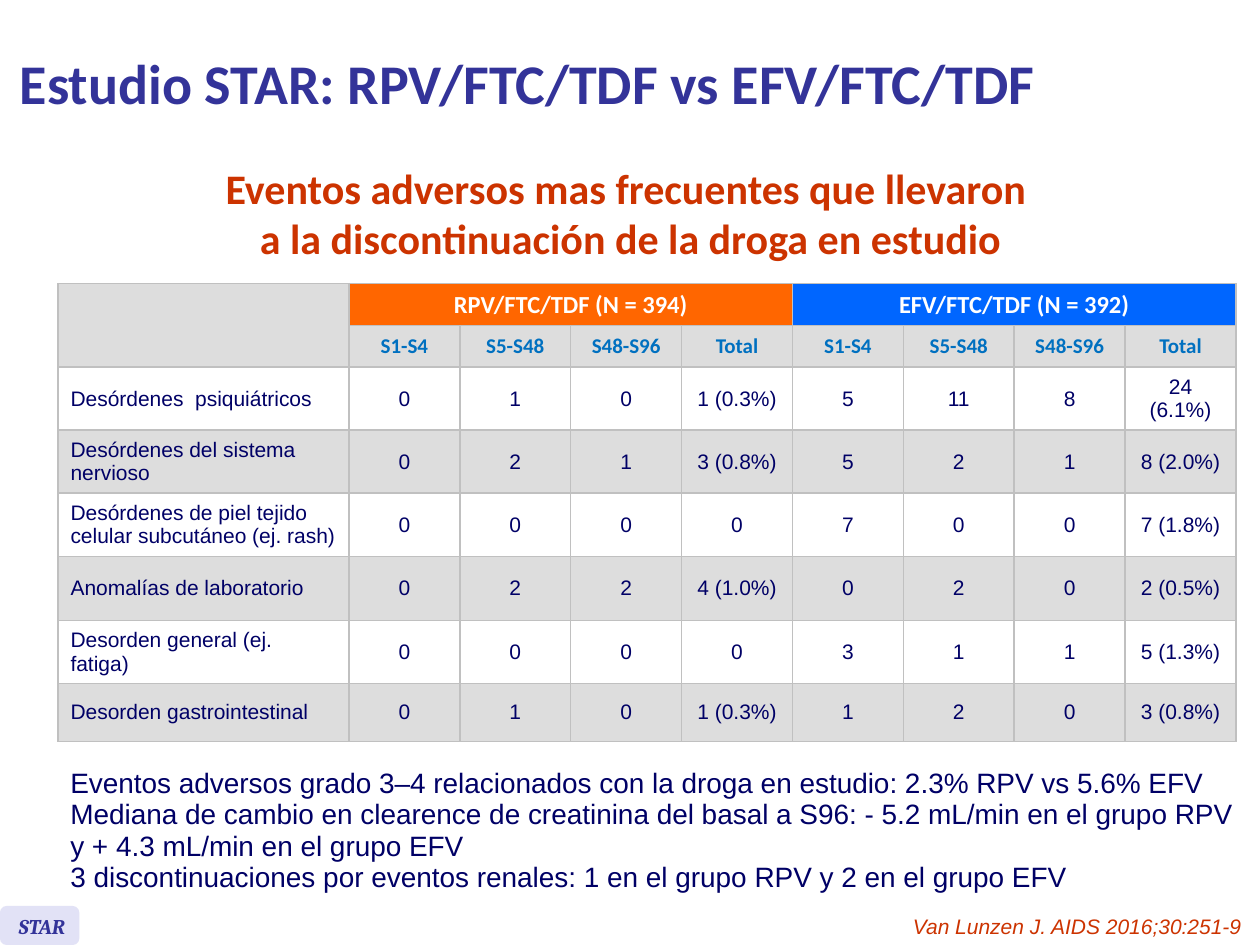
"""Build the STAR study slide on adverse events that led to discontinuation."""
import pptx
import pptx.dml.color
import pptx.enum.shapes
import pptx.enum.text
import pptx.oxml
import pptx.oxml.ns
import pptx.util

Inches = pptx.util.Inches
Pt = pptx.util.Pt
ALIGN = pptx.enum.text.PP_ALIGN
ANCHOR = pptx.enum.text.MSO_ANCHOR
AUTO_SIZE = pptx.enum.text.MSO_AUTO_SIZE

NAVY, INDIGO, RED = "000066", "333399", "CC3300"
WHITE, GRAY, SILVER, SKY = "FFFFFF", "DDDDDD", "C0C0C0", "0070C0"
ORANGE, BLUE, LAVENDER = "FF6600", "0066FF", "E2E2F6"

ARMS = [("RPV/FTC/TDF (N = 394)", ORANGE), ("EFV/FTC/TDF (N = 392)", BLUE)]
PERIODS = ["S1-S4", "S5-S48", "S48-S96", "Total"]
EVENTS = [
    ("Desórdenes  psiquiátricos", "0", "1", "0", "1 (0.3%)", "5", "11", "8", "24 (6.1%)"),
    ("Desórdenes del sistema nervioso", "0", "2", "1", "3 (0.8%)", "5", "2", "1", "8 (2.0%)"),
    ("Desórdenes de piel tejido celular subcutáneo (ej. rash)", "0", "0", "0", "0", "7", "0", "0", "7 (1.8%)"),
    ("Anomalías de laboratorio", "0", "2", "2", "4 (1.0%)", "0", "2", "0", "2 (0.5%)"),
    ("Desorden general (ej. fatiga)", "0", "0", "0", "0", "3", "1", "1", "5 (1.3%)"),
    ("Desorden gastrointestinal", "0", "1", "0", "1 (0.3%)", "1", "2", "0", "3 (0.8%)"),
]
ROW_HEIGHTS = [0.29, 0.33, 0.46, 0.46, 0.46, 0.51, 0.46, 0.46]
COLUMN_WIDTHS = [2.31] + [0.88] * 8
FINDINGS = [
    "Eventos adversos grado 3–4 relacionados con la droga en estudio: 2.3% RPV vs 5.6% EFV",
    "Mediana de cambio en clearence de creatinina del basal a S96: - 5.2 mL/min en el grupo RPV y + 4.3 mL/min en el grupo EFV",
    "3 discontinuaciones por eventos renales: 1 en el grupo RPV y 2 en el grupo EFV",
]


def rgb(color):
    return pptx.dml.color.RGBColor.from_string(color)


class SlideBuilder:
    def __init__(self, slide):
        self.slide = slide

    def style(self, paragraph, size, color, font="Arial", bold=False, italic=False, align=ALIGN.LEFT):
        paragraph.alignment = align
        paragraph.font.name = font
        paragraph.font.size = Pt(size)
        paragraph.font.bold = bold
        paragraph.font.italic = italic
        paragraph.font.color.rgb = rgb(color)

    def title(self, text, box, **style):
        shape = self.slide.shapes.title
        shape.left, shape.top, shape.width, shape.height = map(Inches, box)
        frame = shape.text_frame
        frame.text = text
        frame.auto_size = AUTO_SIZE.NONE
        frame.vertical_anchor = ANCHOR.MIDDLE
        self.style(frame.paragraphs[0], **style)

    def text(self, lines, box, parent=None, anchor=ANCHOR.TOP, grow=True, spacing=None, **style):
        shapes = (parent or self.slide).shapes
        frame = shapes.add_textbox(*map(Inches, box)).text_frame
        frame.word_wrap = True
        frame.auto_size = AUTO_SIZE.SHAPE_TO_FIT_TEXT if grow else AUTO_SIZE.NONE
        frame.vertical_anchor = anchor
        frame.text = "\n".join(lines)
        for paragraph in frame.paragraphs:
            if spacing:
                paragraph.line_spacing = Pt(spacing)
            self.style(paragraph, **style)

    def badge(self, text, box, text_box, **style):
        group = self.slide.shapes.add_group_shape()
        shape = group.shapes.add_shape(
            pptx.enum.shapes.MSO_SHAPE.ROUNDED_RECTANGLE, *map(Inches, box))
        shape.shadow.inherit = False
        shape.fill.solid()
        shape.fill.fore_color.rgb = rgb(LAVENDER)
        shape.line.fill.background()
        self.text([text], text_box, parent=group, **style)

    def cell(self, cell, text, fill, **style):
        properties = cell._tc.get_or_add_tcPr()
        for side in ("lnL", "lnR", "lnT", "lnB"):
            properties.append(pptx.oxml.parse_xml(
                f'<a:{side} {pptx.oxml.ns.nsdecls("a")} w="12700"><a:solidFill>'
                f'<a:srgbClr val="{SILVER}"/></a:solidFill></a:{side}>'))
        cell.fill.solid()
        cell.fill.fore_color.rgb = rgb(fill)
        cell.vertical_anchor = ANCHOR.MIDDLE
        cell.text = text
        self.style(cell.text_frame.paragraphs[0], **style)

    def events_table(self, left, top):
        table = self.slide.shapes.add_table(
            len(ROW_HEIGHTS), len(COLUMN_WIDTHS), Inches(left), Inches(top),
            Inches(sum(COLUMN_WIDTHS)), Inches(sum(ROW_HEIGHTS))).table
        for column, width in zip(table.columns, COLUMN_WIDTHS):
            column.width = Inches(width)
        for row, height in zip(table.rows, ROW_HEIGHTS):
            row.height = Inches(height)
        header = dict(font="Calibri", bold=True, align=ALIGN.CENTER)
        for row in range(2):
            self.cell(table.cell(row, 0), "", GRAY, size=12, color=NAVY)
        table.cell(0, 0).merge(table.cell(1, 0))
        for arm, (name, fill) in enumerate(ARMS):
            first = 1 + arm * len(PERIODS)
            for offset, period in enumerate(PERIODS):
                self.cell(table.cell(0, first + offset), "" if offset else name, fill,
                          size=14, color=WHITE, **header)
                self.cell(table.cell(1, first + offset), period, GRAY, size=12, color=SKY, **header)
            table.cell(0, first).merge(table.cell(0, first + len(PERIODS) - 1))
        for row, event in enumerate(EVENTS):
            for column, value in enumerate(event):
                self.cell(table.cell(row + 2, column), value, GRAY if row % 2 else WHITE,
                          size=12, color=NAVY, align=ALIGN.CENTER if column else ALIGN.LEFT)


def main():
    presentation = pptx.Presentation()
    presentation.slide_width, presentation.slide_height = Inches(10), Inches(7.5)
    builder = SlideBuilder(presentation.slides.add_slide(presentation.slide_layouts[5]))
    builder.title("Eventos adversos mas frecuentes que llevaron \va la discontinuación de la droga en estudio",
                  (0.25, 1.37, 9.51, 0.64), size=24, color=RED, font="Calibri", bold=True, align=ALIGN.CENTER)
    builder.text(FINDINGS, (0.46, 6.04, 9.54, 1.11), spacing=18, size=16, color=NAVY)
    builder.text(["Van Lunzen J. AIDS 2016;30:251-9 "], (7, 7.2, 3, 0.3),
                 size=12, color=RED, italic=True, align=ALIGN.RIGHT)
    builder.badge("STAR", (0, 7.19, 0.63, 0.31), (0.05, 7.2, 0.61, 0.3),
                  size=12, color=INDIGO, font="Cambria", bold=True, italic=True)
    builder.events_table(0.46, 2.25)
    builder.text(["Estudio STAR: RPV/FTC/TDF vs EFV/FTC/TDF"], (0.06, 0.05, 9.55, 1.21),
                 anchor=ANCHOR.MIDDLE, grow=False, size=32, color=INDIGO, font="Calibri", bold=True)
    presentation.save("out.pptx")


if __name__ == "__main__":
    main()
